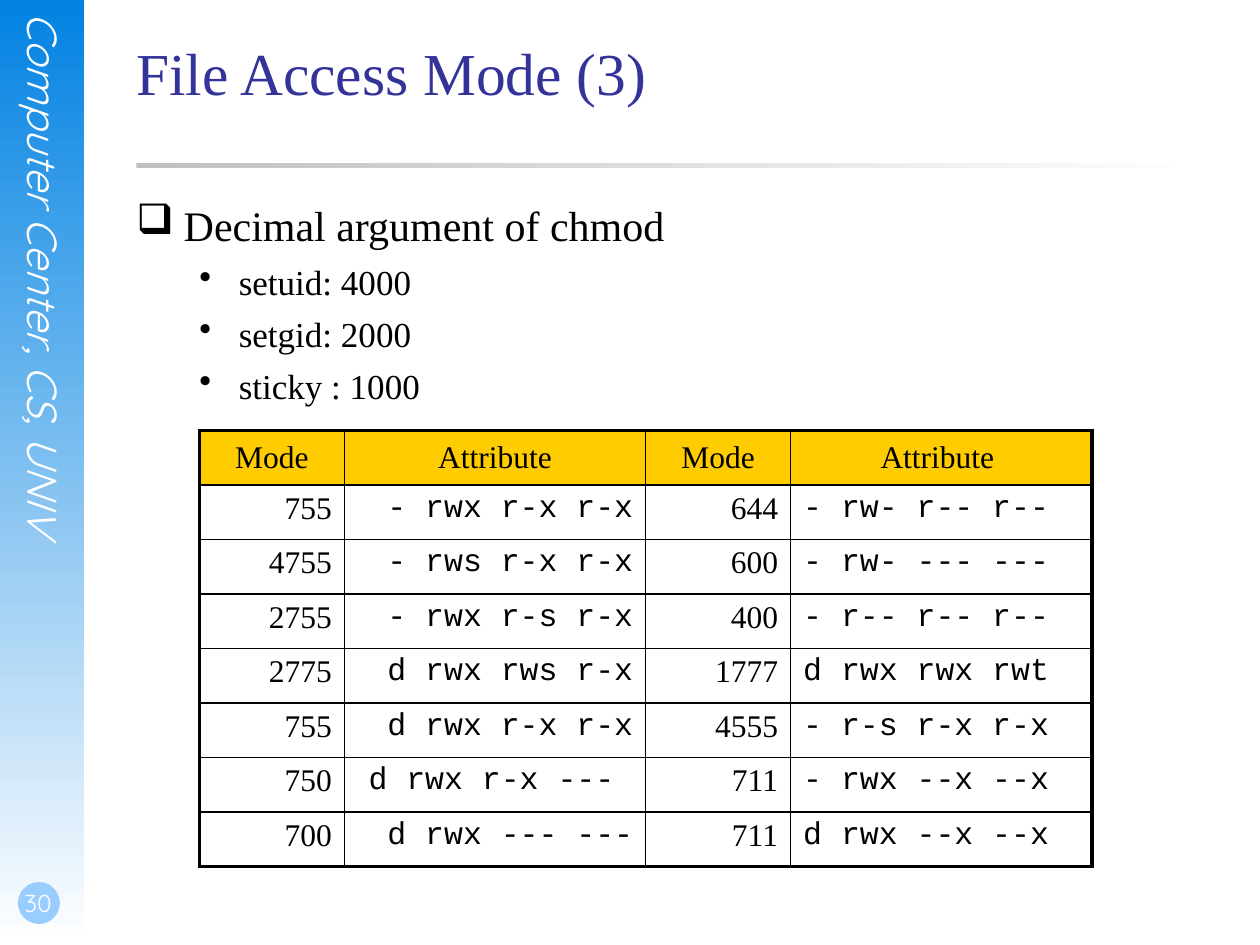
from dataclasses import dataclass

from lxml.etree import SubElement
from pptx import Presentation
from pptx.dml.color import RGBColor
from pptx.enum.shapes import MSO_SHAPE
from pptx.enum.text import MSO_ANCHOR, PP_ALIGN
from pptx.oxml.ns import qn
from pptx.util import Emu, Inches, Pt

COLORS = {
    "sky": "0282E2",
    "white": "FFFFFF",
    "badge": "99CCFF",
    "silver": "C0C0C0",
    "title": "333399",
    "black": "000000",
    "header": "FFCC00",
}
SERIF, MONO, ROUND = "Times New Roman", "Courier New", "Quicksand"
GRID_COLUMNS, GRID_ROWS = 120, 90
SLIDE_WIDTH, SLIDE_HEIGHT = Inches(10), Inches(7.5)
SPACE_BEFORE_SHARE = 0.29
THIN, THICK = 1, 2.25
TABLE_COLUMNS = (13.8, 28.7, 13.8, 28.7)
TABLE_ROW = 5.19


@dataclass
class Area:
    column: float
    row: float
    columns: float
    rows: float

    def lengths(self) -> tuple:
        return across(self.column), down(self.row), across(self.columns), down(self.rows)


@dataclass
class Style:
    size: float
    font: str = SERIF
    color: str = "black"
    italic: bool = False


@dataclass
class Bullet:
    text: str
    mark: str
    size: float
    level: int
    margin: float
    hang: float


BULLETS = [
    Bullet("Decimal argument of chmod", "❑", 24, 0, 4.5, 4.5),
    *(
        Bullet(text, "•", 20, 1, 9.75, 3.75)
        for text in ("setuid: 4000", "setgid: 2000", "sticky : 1000")
    ),
]
MODES = [
    ("Mode", "Attribute", "Mode", "Attribute "),
    ("755", "- rwx r-x r-x", "644", "- rw- r-- r--"),
    ("4755", "- rws r-x r-x", "600", "- rw- --- ---"),
    ("2755", "- rwx r-s r-x", "400", "- r-- r-- r--"),
    ("2775", "d rwx rws r-x", "1777", "d rwx rwx rwt"),
    ("755", "d rwx r-x r-x", "4555", "- r-s r-x r-x"),
    ("750", "d rwx r-x --- ", "711", "- rwx --x --x"),
    ("700", "d rwx --- ---", "711", "d rwx --x --x"),
]


def across(columns: float) -> Emu:
    return Emu(round(SLIDE_WIDTH * columns / GRID_COLUMNS))


def down(rows: float) -> Emu:
    return Emu(round(SLIDE_HEIGHT * rows / GRID_ROWS))


def rgb(name: str) -> RGBColor:
    return RGBColor.from_string(COLORS[name])


def format_runs(para, style: Style) -> None:
    for span in para.runs:
        span.font.size = Pt(style.size)
        span.font.name = style.font
        span.font.italic = style.italic
        span.font.color.rgb = rgb(style.color)


def add_plain_shape(page, kind, area: Area):
    shape = page.shapes.add_shape(kind, *area.lengths())
    shape.shadow.inherit = False
    shape.line.fill.background()
    return shape


def add_gradient_bar(page, area: Area, start: str, angle: float) -> None:
    fill = add_plain_shape(page, MSO_SHAPE.RECTANGLE, area).fill
    fill.gradient()
    fill.gradient_angle = angle
    for stop, color in zip(fill.gradient_stops, (start, "white")):
        stop.color.rgb = rgb(color)


def add_text(page, area: Area, text: str, style: Style):
    box = page.shapes.add_textbox(*area.lengths())
    frame = box.text_frame
    frame.word_wrap = True
    frame.margin_left = frame.margin_right = frame.margin_top = frame.margin_bottom = 0
    frame.text = text
    for para in frame.paragraphs:
        format_runs(para, style)
    return frame


def add_sidebar(page) -> None:
    add_gradient_bar(page, Area(0, 0, 8, 90), "sky", 270)
    frame = add_text(
        page,
        Area(1.8, 1.2, 4.8, 61.3),
        "Computer Center, CS, UNIV",
        Style(24, ROUND, "white", True),
    )
    frame._txBody.bodyPr.set("vert", "eaVert")
    badge = add_plain_shape(page, MSO_SHAPE.OVAL, Area(1.7, 84, 4, 4))
    badge.fill.solid()
    badge.fill.fore_color.rgb = rgb("badge")
    number = add_text(page, Area(0, 82, 7, 6), "30", Style(14, ROUND, "white"))
    number.vertical_anchor = MSO_ANCHOR.BOTTOM
    number.margin_left, number.margin_bottom = Inches(0.02), Inches(0.05)
    number.paragraphs[0].alignment = PP_ALIGN.CENTER


def add_bullets(page, area: Area) -> None:
    text = "\n".join(bullet.text for bullet in BULLETS)
    frame = add_text(page, area, text, Style(20))
    for para, bullet in zip(frame.paragraphs, BULLETS):
        format_runs(para, Style(bullet.size))
        para.level = bullet.level
        para.space_before = Pt(bullet.size * SPACE_BEFORE_SHARE)
        properties = para._p.get_or_add_pPr()
        properties.set("marL", str(across(bullet.margin)))
        properties.set("indent", str(-across(bullet.hang)))
        SubElement(properties, qn("a:buChar"), char=bullet.mark)


def set_borders(cell, widths: dict) -> None:
    properties = cell._tc.get_or_add_tcPr()
    for position, (side, width) in enumerate(widths.items()):
        line = SubElement(properties, qn(f"a:ln{side}"), w=str(Pt(width)))
        fill = SubElement(line, qn("a:solidFill"))
        SubElement(fill, qn("a:srgbClr"), val=COLORS["black"])
        properties.insert(position, line)


def fill_cell(cell, text: str, row: int, column: int) -> None:
    is_header, is_attribute = row == 0, column % 2 == 1
    last_row, last_column = len(MODES) - 1, len(TABLE_COLUMNS) - 1
    cell.text = text
    para = cell.text_frame.paragraphs[0]
    para.space_before = Pt(18 * SPACE_BEFORE_SHARE)
    format_runs(para, Style(18, MONO if is_attribute and not is_header else SERIF))
    if is_header:
        para.alignment = PP_ALIGN.CENTER
        cell.vertical_anchor = MSO_ANCHOR.MIDDLE
        cell.fill.solid()
        cell.fill.fore_color.rgb = rgb("header")
    else:
        para.alignment = PP_ALIGN.LEFT if column == last_column else PP_ALIGN.RIGHT
        cell.fill.background()
    outer = {
        "L": column == 0,
        "R": column == last_column,
        "T": row == 0,
        "B": row == last_row,
    }
    set_borders(cell, {side: THICK if edge else THIN for side, edge in outer.items()})


def add_mode_table(page, column: float, row: float) -> None:
    area = Area(column, row, sum(TABLE_COLUMNS), TABLE_ROW * len(MODES))
    table = page.shapes.add_table(len(MODES), len(TABLE_COLUMNS), *area.lengths()).table
    table.first_row = table.horz_banding = False
    for table_column, width in zip(table.columns, TABLE_COLUMNS):
        table_column.width = across(width)
    for row_index, texts in enumerate(MODES):
        table.rows[row_index].height = down(TABLE_ROW)
        for column_index, text in enumerate(texts):
            fill_cell(table.cell(row_index, column_index), text, row_index, column_index)


def main() -> None:
    deck = Presentation()
    deck.slide_width, deck.slide_height = SLIDE_WIDTH, SLIDE_HEIGHT
    page = deck.slides.add_slide(deck.slide_layouts[6])
    add_sidebar(page)
    add_gradient_bar(page, Area(13, 15.5, 102, 0.5), "silver", 0)
    add_text(page, Area(13, 3.4, 102, 15), "File Access Mode (3)", Style(34, color="title"))
    add_bullets(page, Area(13, 19, 102, 61))
    add_mode_table(page, 19, 41)
    deck.save("out.pptx")


if __name__ == "__main__":
    main()
